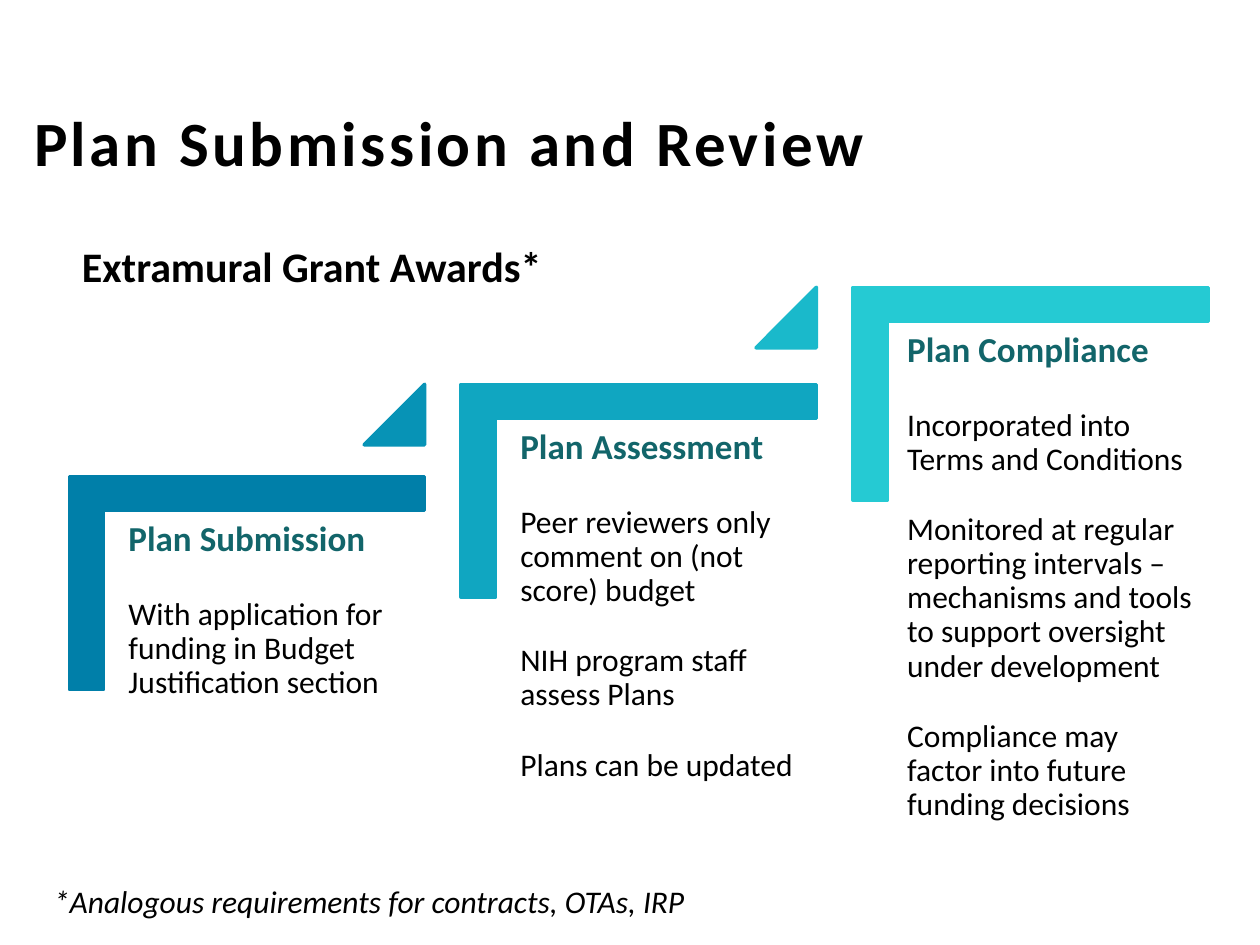
from pptx import Presentation
from pptx.dml.color import RGBColor
from pptx.enum import shapes, text
from pptx.util import Inches, Pt

FONT = "Calibri"
COLORS = {"text": "000000", "heading": "12656A"}
TITLE = {"size": Pt(36), "bold": True}
SUBTITLE = {"size": Pt(24), "bold": True}
FOOTNOTE = {"size": Pt(18), "italic": True}
HEADING = {"size": Pt(20), "bold": True}
BODY = {"size": Pt(18), "bold": False}

STEP_WIDTH, STEP_HEIGHT, STEP_PITCH = 2.82, 1.69, 3.11
FIRST_STEP_LEFT = 0.55
BAR_RATIO = 0.161
MARKER_SIZE = 0.48

STEPS = [
    {"top": 3.78, "bracket": "007FA9", "marker": "0793B6",
     "indent": 0.39, "text_width": 2.54,
     "heading": "Plan Submission",
     "points": ["With application for funding in Budget Justification section"]},
    {"top": 3.05, "bracket": "10A6C1", "marker": "1AB9CB",
     "indent": 0.39, "text_width": 2.54,
     "heading": "Plan Assessment",
     "points": ["Peer reviewers only comment on (not score) budget",
                "NIH program staff assess Plans",
                "Plans can be updated"]},
    {"top": 2.28, "bracket": "25CAD3", "marker": None,
     "indent": 0.35, "text_width": 2.47,
     "heading": "Plan Compliance",
     "points": ["Incorporated into Terms and Conditions",
                "Monitored at regular reporting intervals – mechanisms and "
                "tools to support oversight under development",
                "Compliance may factor into future funding decisions"]},
]


def write(paragraph, words, style, color="text"):
    run = paragraph.add_run()
    run.text = words
    for attribute, value in style.items():
        setattr(run.font, attribute, value)
    run.font.name = FONT
    run.font.color.rgb = RGBColor.from_string(COLORS[color])
    return run


def add_text_frame(slide, left, top, width, height):
    frame = slide.shapes.add_textbox(*map(Inches, (left, top, width, height))).text_frame
    frame.word_wrap = True
    return frame


def add_solid(slide, preset, left, top, width, height, color, adjustment):
    solid = slide.shapes.add_shape(preset, *map(Inches, (left, top, width, height)))
    solid.shadow.inherit = False
    solid.adjustments[0] = adjustment
    solid.fill.solid()
    solid.fill.fore_color.rgb = RGBColor.from_string(color)
    solid.line.color.rgb = RGBColor.from_string(color)
    solid.line.width = Pt(2)
    return solid


def place_title(slide, left, top, width, height):
    title = slide.shapes.title
    title.left, title.top, title.width, title.height = map(
        Inches, (left, top, width, height))
    frame = title.text_frame
    frame.auto_size = text.MSO_AUTO_SIZE.NONE
    frame.vertical_anchor = text.MSO_ANCHOR.MIDDLE
    heading = frame.paragraphs[0]
    heading.alignment = text.PP_ALIGN.LEFT
    run = write(heading, "Plan Submission and Review", TITLE)
    run.font._element.set("spc", "200")


def add_caption(slide, left, top, width, height, words, style, alignment):
    caption = add_text_frame(slide, left, top, width, height).paragraphs[0]
    caption.alignment = alignment
    write(caption, words, style)


def add_bracket(slide, left, top, width, height, color):
    """Turn a corner shape by 90° so that it fills the given box."""
    shift = (width - height) / 2
    bracket = add_solid(slide, shapes.MSO_SHAPE.CORNER, left + shift, top - shift,
                        height, width, color, BAR_RATIO)
    bracket.adjustments[1] = BAR_RATIO
    bracket.rotation = 90


def add_step_text(slide, left, top, width, height, heading, points):
    frame = add_text_frame(slide, left, top, width, height)
    for side in ("left", "top", "right", "bottom"):
        setattr(frame, f"margin_{side}", Inches(0.08))
    title = frame.paragraphs[0]
    write(title, heading, HEADING, "heading")
    title.space_after = Pt(22)
    for point in points:
        paragraph = frame.add_paragraph()
        write(paragraph, point, BODY)
        paragraph.space_after = Pt(21)
    for paragraph in frame.paragraphs:
        paragraph.line_spacing = 0.9


def add_staircase(slide, left):
    for index, step in enumerate(STEPS):
        step_left, top = left + index * STEP_PITCH, step["top"]
        add_bracket(slide, step_left, top, STEP_WIDTH, STEP_HEIGHT, step["bracket"])
        add_step_text(slide, step_left + step["indent"], top + 0.28,
                      step["text_width"], 2.23, step["heading"], step["points"])
        if step["marker"]:
            add_solid(slide, shapes.MSO_SHAPE.ISOSCELES_TRIANGLE,
                      step_left + STEP_WIDTH - MARKER_SIZE, STEPS[index + 1]["top"],
                      MARKER_SIZE, MARKER_SIZE, step["marker"], 1)


def main():
    deck = Presentation()
    deck.slide_width, deck.slide_height = Inches(10), Inches(7.5)
    slide = deck.slides.add_slide(deck.slide_layouts[5])
    place_title(slide, 0.17, 0.5, 7.25, 1.25)
    add_caption(slide, 0.46, 1.86, 4.03, 0.5, "Extramural Grant Awards*",
                SUBTITLE, text.PP_ALIGN.CENTER)
    add_staircase(slide, FIRST_STEP_LEFT)
    add_caption(slide, 0.33, 6.95, 5.84, 0.4,
                "*Analogous requirements for contracts, OTAs, IRP",
                FOOTNOTE, text.PP_ALIGN.LEFT)
    deck.save("out.pptx")


if __name__ == "__main__":
    main()
